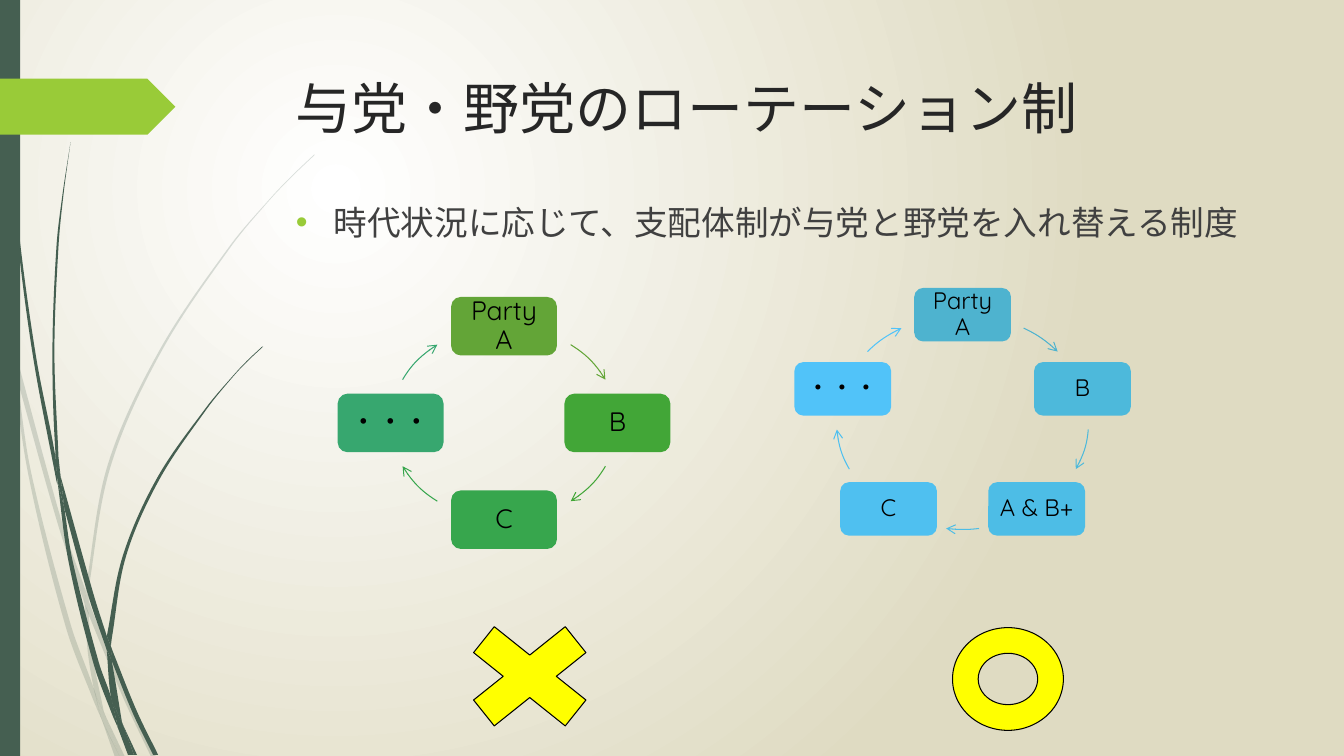
from math import cos, dist, radians, sin, tan

from pptx import Presentation
from pptx.dml.color import RGBColor
from pptx.enum.shapes import MSO_SHAPE
from pptx.enum.text import MSO_ANCHOR, PP_ALIGN
from pptx.oxml.ns import qn
from pptx.util import Pt
from lxml.etree import SubElement

SLIDE_WIDTH, SLIDE_HEIGHT = 960, 540
WHITE = RGBColor(0xFF, 0xFF, 0xFF)
SAND = RGBColor(0xDF, 0xDB, 0xC2)
PINE = RGBColor(0x45, 0x5F, 0x51)
LIME = RGBColor(0x99, 0xCB, 0x38)
YELLOW = RGBColor(0xFF, 0xFF, 0x00)
BLACK = RGBColor(0x00, 0x00, 0x00)
TITLE_GREY = RGBColor(0x26, 0x26, 0x26)
BODY_GREY = RGBColor(0x40, 0x40, 0x40)
LATIN_FONT, CJK_FONT = "Quicksand", "Noto Sans CJK JP"

# Pieces of grass: two curved edges each, in hundredths of an inch
GRASS_UNIT = 0.72
PALE_GRASS = [
    ([(11, 350), (9, 322), (0, 282)], [(0, 299), (10, 344)]),
    ([(17, 376), (58, 522), (84, 599)], [(85, 586), (62, 520), (14, 345)]),
    ([(88, 610), (123, 694), (150, 751)], [(155, 751), (127, 692), (92, 607), (88, 596)]),
    ([(119, 751)], [(124, 751), (105, 711)]),
    ([(101, 714), (92, 693), (65, 621), (28, 470), (11, 350)],
     [(17, 376), (31, 469), (70, 619), (93, 683), (99, 707)]),
    ([(84, 599), (87, 646), (93, 683), (96, 692), (105, 711)],
     [(103, 706), (91, 646), (88, 610), (88, 608)]),
    ([(312, 153), (289, 175), (268, 197), (228, 244), (158, 348), (107, 461), (85, 584)],
     [(88, 596), (88, 584), (110, 462), (160, 349), (229, 245), (268, 198), (290, 175),
      (312, 154)]),
    ([(101, 714), (114, 751)], [(119, 751)]),
    ([(88, 610), (88, 596)], [(85, 586), (84, 599)]),
    ([(93, 683), (99, 707), (101, 714), (119, 751)], [(105, 711), (96, 692)]),
]
DARK_GRASS = [
    ([(4, 0), (5, 48), (8, 109), (19, 232), (36, 355), (55, 453), (57, 481)],
     [(56, 477), (33, 355), (17, 233), (7, 110), (4, 48), (3, 0)]),
    ([(64, 505), (88, 592), (106, 645)], [(106, 631), (93, 590), (60, 472)]),
    ([(111, 656), (132, 708), (152, 749)], [(157, 749), (136, 706), (113, 649), (110, 641)]),
    ([(57, 477), (68, 557), (93, 659), (111, 708), (117, 722)],
     [(116, 717), (110, 691), (98, 657), (72, 556), (64, 505)]),
    ([(70, 141), (62, 193), (56, 245), (52, 349), (55, 449), (60, 472)],
     [(58, 453), (54, 349), (58, 245), (63, 193), (70, 141)]),
    ([(133, 749)], [(136, 749), (122, 719)]),
    ([(55, 449), (55, 453), (57, 477)], [(64, 505), (60, 472)]),
    ([(260, 344), (245, 358), (231, 373), (204, 405), (156, 474), (122, 551), (106, 631)],
     [(110, 641), (111, 633), (125, 552), (158, 476), (205, 406), (231, 374), (245, 359),
      (261, 344)]),
    ([(117, 722), (127, 749)], [(131, 749)]),
    ([(106, 645), (110, 691), (116, 706), (122, 719)], [(121, 716), (111, 656), (109, 651)]),
    ([(106, 631), (106, 645)], [(109, 651), (111, 656), (110, 641)]),
    ([(110, 691), (116, 717), (117, 722), (130, 749)], [(133, 749), (122, 719), (116, 706)]),
]

# Steps of each cycle: label, colour, and the arrow's clockwise degrees from the top
TWO_WAY_STEPS = [
    ("Party A", RGBColor(0x63, 0xA5, 0x37), 36, 63.4),
    ("B", RGBColor(0x42, 0xA6, 0x37), 116.6, 144),
    ("C", RGBColor(0x37, 0xA6, 0x4D), 216, 243.4),
    ("・・・", RGBColor(0x37, 0xA7, 0x6F), 296.6, 324),
]
COALITION_STEPS = [
    ("Party A", RGBColor(0x4E, 0xB3, 0xCF), 29, 49),
    ("B", RGBColor(0x4D, 0xB9, 0xDB), 94, 116),
    ("A & B+", RGBColor(0x4D, 0xBD, 0xE6), 172.5, 187.5),
    ("C", RGBColor(0x4F, 0xC0, 0xF0), 244, 266),
    ("・・・", RGBColor(0x51, 0xC3, 0xF9), 311, 331),
]


def write(shape, text, size, color, font=LATIN_FONT, align=PP_ALIGN.LEFT,
          anchor=MSO_ANCHOR.TOP, margins=(7.2, 3.6), spacing=1.0):
    frame = shape.text_frame
    frame.word_wrap = True
    frame.vertical_anchor = anchor
    frame.margin_left = frame.margin_right = Pt(margins[0])
    frame.margin_top = frame.margin_bottom = Pt(margins[1])
    para = frame.paragraphs[0]
    para.alignment, para.line_spacing = align, spacing
    span = para.add_run()
    span.text = text
    span.font.name, span.font.size = font, Pt(size)
    span.font.color.rgb = color
    SubElement(span.font._element, qn("a:ea")).set("typeface", font)
    return para


def add_preset(page, kind, box, fill, outline=None):
    shape = page.shapes.add_shape(kind, *map(Pt, box))
    shape.shadow.inherit = False
    shape.fill.solid()
    shape.fill.fore_color.rgb = fill
    if outline is None:
        shape.line.fill.background()
    else:
        shape.line.color.rgb, shape.line.width = outline, Pt(0.75)
    return shape


def add_curve(page, box, start, segments, close):
    """Draw segments of one point (a line) or three (a Bézier curve) inside the box."""
    left, top, width, height = box
    builder = page.shapes.build_freeform(Pt(left), Pt(top))
    builder.add_line_segments([(Pt(left + width), Pt(top + height))], close=False)
    shape = builder.convert_to_shape()
    shape.shadow.inherit = False
    outline = shape._element.find(".//" + qn("a:path"))
    for child in list(outline):
        outline.remove(child)
    for points in [None, *segments]:
        tag = "a:moveTo" if points is None else "a:cubicBezTo" if len(points) == 3 else "a:lnTo"
        command = SubElement(outline, qn(tag))
        for x, y in points or [start]:
            SubElement(command, qn("a:pt"), x=str(Pt(x - left)), y=str(Pt(y - top)))
    if close:
        SubElement(outline, qn("a:close"))
    return shape


def smooth(points):
    """Return Bézier segments that pass smoothly through the points."""
    def handle(point, before, after, length):
        scale = length / 3 / (dist(before, after) or 1)
        return tuple(p + (a - b) * scale for p, b, a in zip(point, before, after))

    padded = [points[0], *points, points[-1]]
    return [(handle(b, a, c, dist(b, c)), handle(c, d, b, dist(b, c)), c)
            for a, b, c, d in zip(padded, padded[1:], padded[2:], padded[3:])]


def add_backdrop(page):
    fill = page.background.fill
    fill.gradient()
    for stop, color in zip(fill.gradient_stops, (WHITE, SAND)):
        stop.color.rgb = color
    gradient = page.element.find(".//" + qn("a:gradFill"))
    gradient.remove(gradient.find(qn("a:lin")))
    circle = SubElement(gradient, qn("a:path"), path="circle")
    SubElement(circle, qn("a:fillToRect"), l="50000", t="50000", r="100000", b="100000")


def add_grass(page, box, pieces, opacity=100):
    for piece in pieces:
        down, up = ([(box[0] + x * GRASS_UNIT, box[1] + y * GRASS_UNIT) for x, y in edge]
                    for edge in piece)
        xs, ys = zip(*down, *up)
        frame = (min(xs), min(ys), max(xs) - min(xs), max(ys) - min(ys))
        blade = add_curve(page, frame, down[0], [*smooth(down), [up[0]], *smooth(up)], close=True)
        blade.fill.solid()
        blade.fill.fore_color.rgb = PINE
        blade.line.fill.background()
        if opacity < 100:
            color = blade.fill._xPr.find(".//" + qn("a:srgbClr"))
            SubElement(color, qn("a:alpha")).set("val", str(opacity * 1000))


def add_side_band(page, box):
    left, top, _, height = box
    add_preset(page, MSO_SHAPE.RECTANGLE, (left, top, 14.4, height), PINE)
    add_preset(page, MSO_SHAPE.PENTAGON, (left, top + 56.2, 125.3, 40), LIME)


def add_heading(page, box):
    left, top, width, height = box
    title = page.shapes.add_textbox(*map(Pt, (left, top, width, 100.8)))
    write(title, "与党・野党のローテーション制", 40, TITLE_GREY, font=CJK_FONT)
    body = page.shapes.add_textbox(*map(Pt, (left, top + 91.4, width, height - 91.4)))
    para = write(body, "時代状況に応じて、支配体制が与党と野党を入れ替える制度", 24, BODY_GREY)
    para.space_before = Pt(10)
    props = para._p.get_or_add_pPr()
    props.set("marL", str(Pt(27)))
    props.set("indent", str(Pt(-27)))
    color = SubElement(props, qn("a:buClr"))
    SubElement(color, qn("a:srgbClr")).set("val", str(LIME))
    SubElement(props, qn("a:buFont")).set("typeface", "Arial")
    SubElement(props, qn("a:buChar")).set("char", "•")


def add_cycle(page, box, steps, node_size, text_size, margin):
    left, top, width, height = box
    node_width, node_height = node_size

    def on_ring(degrees, lead=0):
        angle = radians(degrees)
        return (left + width / 2 * (1 + sin(angle) + lead * cos(angle)),
                top + height / 2 * (1 - cos(angle) + lead * sin(angle)))

    for index, (label, color, start, end) in enumerate(steps):
        x, y = on_ring(360 * index / len(steps))
        node = add_preset(page, MSO_SHAPE.ROUNDED_RECTANGLE,
                          (x - node_width / 2, y - node_height / 2, *node_size), color)
        write(node, label, text_size, BLACK, align=PP_ALIGN.CENTER,
              anchor=MSO_ANCHOR.MIDDLE, margins=(margin, margin), spacing=0.9)
        lead = 4 / 3 * tan(radians(end - start) / 4)
        bend = (on_ring(start, lead), on_ring(end, -lead), on_ring(end))
        arrow = add_curve(page, box, on_ring(start), [bend], close=False)
        arrow.fill.background()
        arrow.line.color.rgb, arrow.line.width = color, Pt(0.75)
        SubElement(arrow.line._get_or_add_ln(), qn("a:tailEnd")).set("type", "arrow")


def add_verdicts(page, box):
    left, top, _, _ = box
    add_preset(page, MSO_SHAPE.MATH_MULTIPLY, (left, top, 126, 100.8), YELLOW, BLACK)
    add_preset(page, MSO_SHAPE.DONUT, (left + 365, top + 15.6, 79.2, 73.4), YELLOW, BLACK)


def main():
    deck = Presentation()
    deck.slide_width, deck.slide_height = Pt(SLIDE_WIDTH), Pt(SLIDE_HEIGHT)
    page = deck.slides.add_slide(deck.slide_layouts[6])
    whole = (0, 0, SLIDE_WIDTH, SLIDE_HEIGHT)
    add_backdrop(page)
    add_grass(page, whole, PALE_GRASS, opacity=20)
    add_grass(page, whole, DARK_GRASS)
    add_side_band(page, whole)
    add_heading(page, (204.2, 49, 702, 388.8))
    add_cycle(page, (279, 233, 162, 138.2), TWO_WAY_STEPS, (75.6, 41.8), 19, 7.2)
    add_cycle(page, (597.6, 224.8, 180, 153.4), COALITION_STEPS, (69.1, 38.2), 17, 5)
    add_verdicts(page, (315.4, 432.7, 444.2, 100.8))
    deck.save("out.pptx")


if __name__ == "__main__":
    main()
